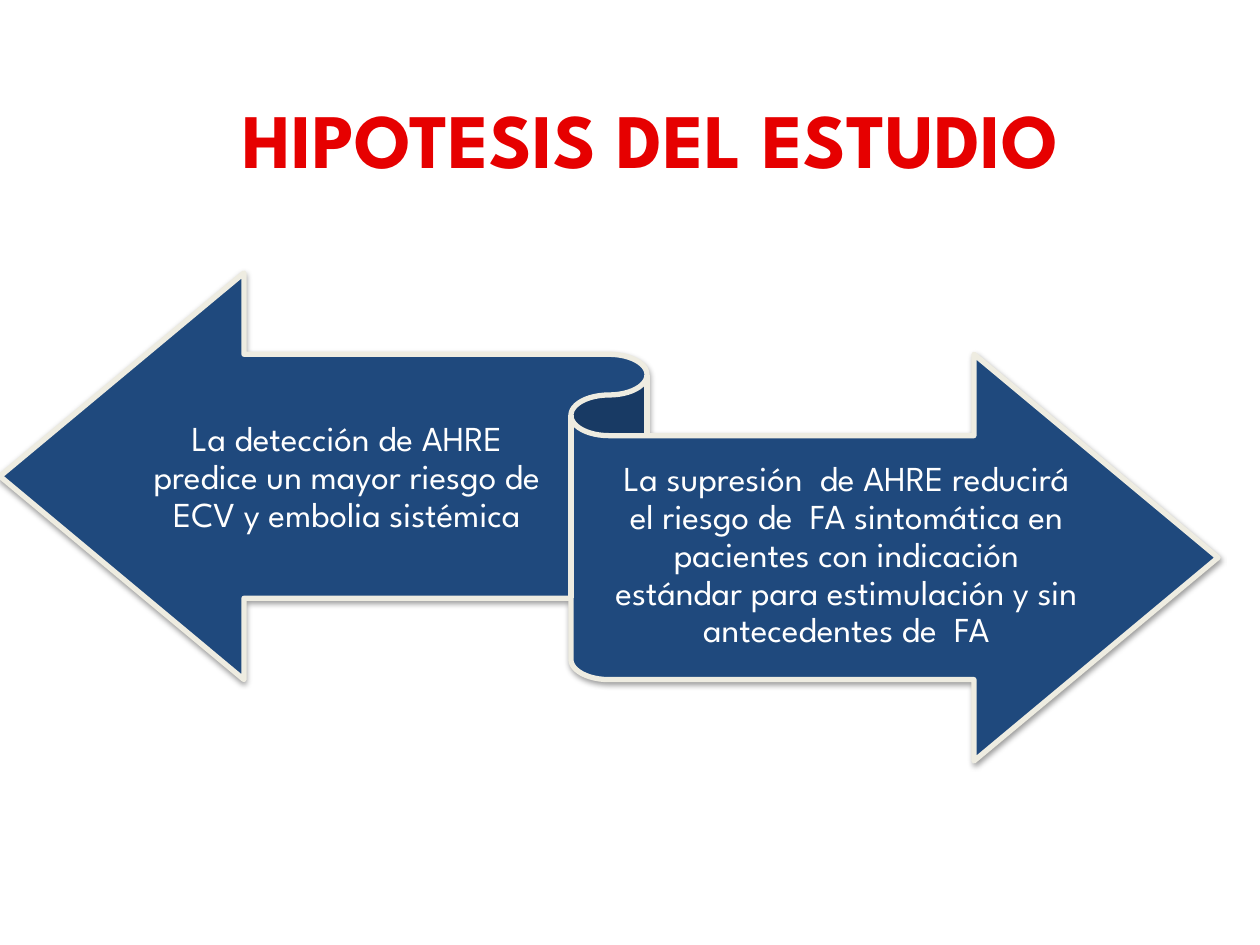
from lxml import etree
from pptx import Presentation
from pptx import util as u
from pptx.dml.color import RGBColor
from pptx.enum import shapes, text
from pptx.oxml.ns import qn

RED = RGBColor(0xE6, 0x00, 0x00)
NAVY = RGBColor(0x1F, 0x49, 0x7D)
CREAM = RGBColor(0xEE, 0xEC, 0xE1)
WHITE = RGBColor(0xFF, 0xFF, 0xFF)
SCALE = 914400 / 126


def px(length):
    """Turn pixels into EMU."""
    return u.Emu(round(length * SCALE))


class SlideBuilder:
    """Hold the style and the current slide, and draw each kind of element."""

    font = "League Spartan"

    def __init__(self, page):
        self.page = page

    def apply(self, target, values):
        """Set every attribute in a dict of format values."""
        for name, value in values.items():
            setattr(target, name, value)

    def label(self, bounds, wording, size, color, bold=False, frame=None, spacing=None):
        """Add a centred text box."""
        box = self.page.shapes.add_textbox(*map(px, bounds))
        self.apply(box.text_frame, {
            "word_wrap": True,
            "vertical_anchor": text.MSO_ANCHOR.MIDDLE,
            **(frame or {}),
        })
        para = box.text_frame.paragraphs[0]
        self.apply(para, {"alignment": text.PP_ALIGN.CENTER, **(spacing or {})})
        span = para.add_run()
        span.text = wording
        self.apply(span.font, {"name": self.font, "size": u.Pt(size), "bold": bold})
        span.font.color.rgb = color

    def ribbon(self, bounds):
        """Add the two-headed ribbon with its soft shadow."""
        shape = self.page.shapes.add_shape(
            shapes.MSO_SHAPE.LEFT_RIGHT_RIBBON, *map(px, bounds))
        shape.fill.solid()
        shape.fill.fore_color.rgb = NAVY
        shape.line.color.rgb = CREAM
        shape.line.width = u.Pt(3)
        shape.shadow.inherit = False
        effects = shape._element.spPr.find(qn("a:effectLst"))
        shadow = etree.SubElement(
            effects, qn("a:outerShdw"), blurRad="40000", dist="20000",
            dir="5400000", rotWithShape="0")
        tint = etree.SubElement(shadow, qn("a:srgbClr"), val="000000")
        etree.SubElement(tint, qn("a:alpha"), val="38000")


def main():
    """Build the hypothesis slide."""
    deck = Presentation()
    deck.slide_width, deck.slide_height = px(1260), px(945)
    builder = SlideBuilder(deck.slides.add_slide(deck.slide_layouts[6]))
    builder.label((84, 59, 1134, 158), "HIPOTESIS DEL ESTUDIO", 44, RED, bold=True)
    builder.ribbon((0, 273, 1218, 488))

    frame = {"margin_left": 0, "margin_right": 0,
             "margin_top": px(10), "margin_bottom": px(10)}
    spacing = {"line_spacing": 0.9, "space_after": u.Pt(7)}
    hypotheses = [
        ((146, 359, 402, 238),
         "La detección de AHRE predice un mayor riesgo de ECV y embolia sistémica"),
        ((609, 437, 475, 238),
         "La supresión  de AHRE reducirá el riesgo de  FA sintomática en pacientes "
         "con indicación estándar para estimulación y sin antecedentes de  FA"),
    ]
    for bounds, wording in hypotheses:
        builder.label(bounds, wording, 20, WHITE, frame=frame, spacing=spacing)
    deck.save("out.pptx")


if __name__ == "__main__":
    main()
